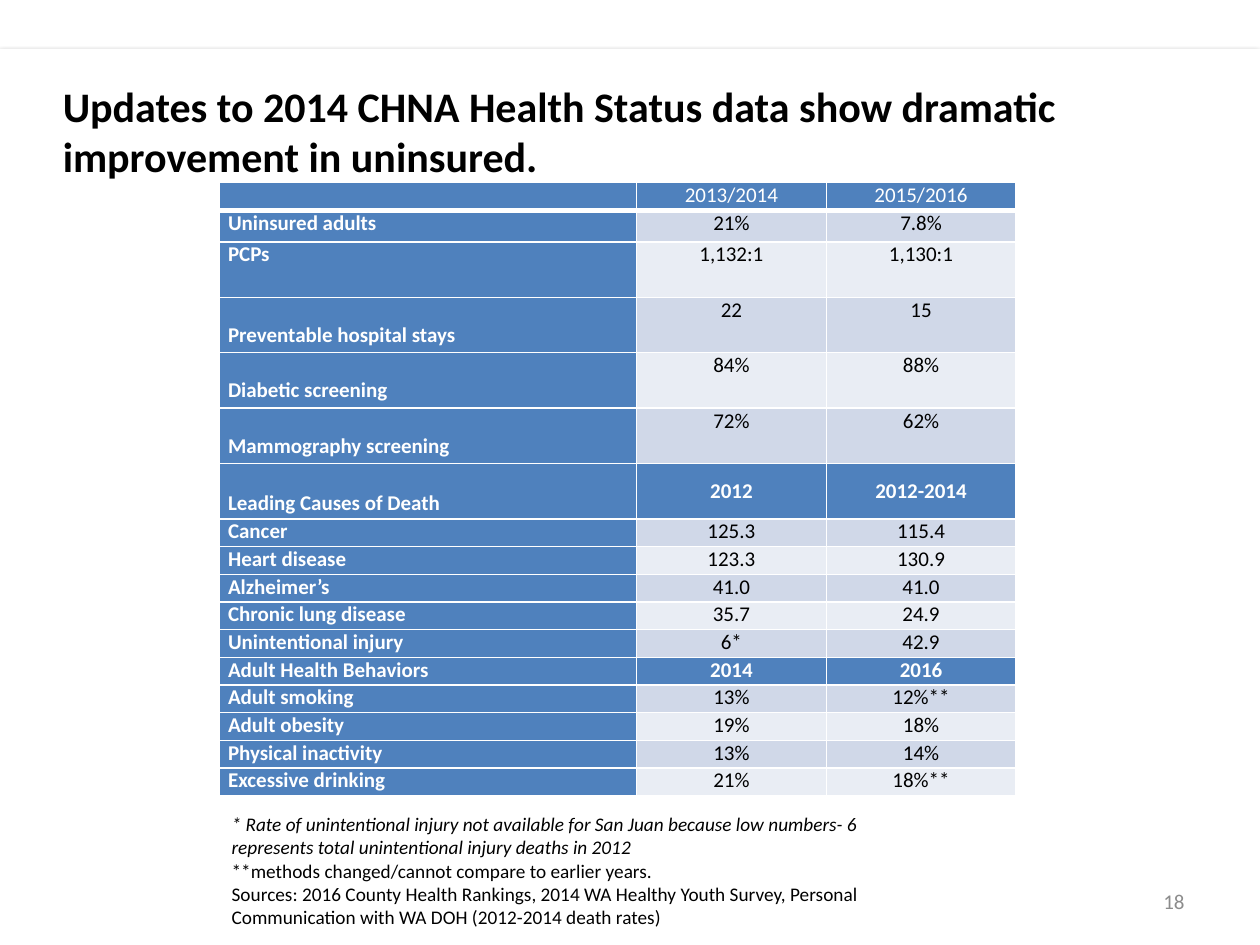
"""Build the slide of health status updates since the 2014 CHNA."""
import pptx
import pptx.util
import pptx.dml.color
import pptx.enum.shapes
import pptx.enum.text
import pptx.oxml
import pptx.oxml.ns

Inches = pptx.util.Inches
Pt = pptx.util.Pt
RGBColor = pptx.dml.color.RGBColor
Align = pptx.enum.text.PP_ALIGN
Anchor = pptx.enum.text.MSO_ANCHOR

BLACK = RGBColor(0, 0, 0)
WHITE = RGBColor(255, 255, 255)
GRAY = RGBColor(0x8C, 0x8C, 0x8C)
BLUE = RGBColor(0x4F, 0x81, 0xBD)
DARK = RGBColor(0xD0, 0xD8, 0xE8)
LIGHT = RGBColor(0xE9, 0xED, 0xF4)

FONT = "Calibri"
TITLE = "Updates to 2014 CHNA Health Status data show dramatic improvement in uninsured."
NOTES = [
    "* Rate of unintentional injury not available for San Juan because low numbers- 6 "
    "represents total unintentional injury deaths in 2012",
    "**methods changed/cannot compare to earlier years.",
    "Sources: 2016 County Health Rankings, 2014 WA Healthy Youth Survey, Personal "
    "Communication with WA DOH (2012-2014 death rates)",
]
COLS = [3.31, 1.51, 1.5]
ROWS = [
    ("", "2013/2014", "2015/2016"),
    ("Uninsured adults", "21%", "7.8%"),
    ("PCPs", "1,132:1", "1,130:1"),
    ("Preventable hospital stays", "22", "15"),
    ("Diabetic screening", "84%", "88%"),
    ("Mammography screening", "72%", "62%"),
    ("Leading Causes of Death", "2012", "2012-2014"),
    ("Cancer", "125.3", "115.4"),
    ("Heart disease", "123.3", "130.9"),
    ("Alzheimer’s", "41.0", "41.0"),
    ("Chronic lung disease", "35.7", "24.9"),
    ("Unintentional injury", "6*", "42.9"),
    ("Adult Health Behaviors", "2014", "2016"),
    ("Adult smoking", "13%", "12%**"),
    ("Adult obesity", "19%", "18%"),
    ("Physical inactivity", "13%", "14%"),
    ("Excessive drinking", "21%", "18%**"),
]
HEADS = (0, 6, 12)
TALL = range(2, 7)
LOW = range(3, 7)
MID = 6


def add_xml(parent, text):
    """Append an element, given as drawing XML, to its parent."""
    tag, rest = text.split(" ", 1)
    space = pptx.oxml.ns.nsdecls("a")
    parent.append(pptx.oxml.parse_xml(f"{tag} {space} {rest}"))


def style(para, size, color, bold=False, italic=False, align=Align.LEFT):
    """Set the font and alignment of a paragraph."""
    para.alignment = align
    font = para.font
    font.name, font.size = FONT, Pt(size)
    font.bold, font.italic = bold, italic
    font.color.rgb = color


def add_text(slide, box, lines, anchor=Anchor.TOP):
    """Add a wrapped text box and return its frame."""
    frame = slide.shapes.add_textbox(*map(Inches, box)).text_frame
    frame.word_wrap = True
    frame.vertical_anchor = anchor
    frame.text = "\n".join(lines)
    return frame


def add_panel(slide):
    """Add the white panel with a soft shadow."""
    rect = pptx.enum.shapes.MSO_SHAPE.RECTANGLE
    panel = slide.shapes.add_shape(rect, *map(Inches, (0, 0.39, 10, 7.11)))
    panel.fill.solid()
    panel.fill.fore_color.rgb = WHITE
    panel.line.fill.background()
    add_xml(panel._element.spPr,
            f'<a:effectLst ><a:outerShdw blurRad="{Pt(3.1)}" dist="{Pt(1.8)}" '
            'dir="5400000" rotWithShape="0"><a:srgbClr val="000000">'
            '<a:alpha val="35000"/></a:srgbClr></a:outerShdw></a:effectLst>')


def add_edges(cell, row):
    """Draw white cell borders, thick under the top row."""
    wide = {"T": 3 if row == 1 else 1, "B": 3 if row == 0 else 1}
    for side in "LRTB":
        add_xml(cell._tc.get_or_add_tcPr(),
                f'<a:ln{side} w="{Pt(wide.get(side, 1))}"><a:solidFill>'
                f'<a:srgbClr val="{WHITE}"/></a:solidFill></a:ln{side}>')


def fill_cell(cell, row, col, text):
    """Style one table cell by its row and column."""
    head = col == 0 or row in HEADS
    add_edges(cell, row)
    cell.fill.solid()
    cell.fill.fore_color.rgb = BLUE if head else DARK if row % 2 else LIGHT
    cell.margin_left = cell.margin_right = Inches(0.07)
    cell.margin_top = Inches(0.2 if col == 0 and row in LOW else 0)
    cell.margin_bottom = 0
    cell.vertical_anchor = Anchor.MIDDLE if row == MID else Anchor.TOP
    cell.text = text
    para = cell.text_frame.paragraphs[0]
    style(para, 12, WHITE if head else BLACK, bold=head and row > 0,
          align=Align.CENTER if col else Align.LEFT)
    if not text:
        add_xml(para._p, '<a:endParaRPr sz="1200"/>')


def add_grid(slide):
    """Add the table of health measures."""
    place = map(Inches, (1.74, 1.45, sum(COLS), 4.88))
    table = slide.shapes.add_table(len(ROWS), len(COLS), *place).table
    for col, width in enumerate(COLS):
        table.columns[col].width = Inches(width)
    for row, texts in enumerate(ROWS):
        high = 0.44 if row in TALL else 0.25 if row == 1 else 0.22
        table.rows[row].height = Inches(high)
        for col, text in enumerate(texts):
            fill_cell(table.cell(row, col), row, col, text)


def main():
    """Build and save the slide."""
    deck = pptx.Presentation()
    deck.slide_width, deck.slide_height = Inches(10), Inches(7.5)
    slide = deck.slides.add_slide(deck.slide_layouts[6])
    add_panel(slide)
    title = add_text(slide, (0.4, 0.41, 9, 1.25), [TITLE], Anchor.MIDDLE)
    style(title.paragraphs[0], 24, BLACK, bold=True)
    add_grid(slide)
    page = add_text(slide, (7.17, 6.95, 2.33, 0.4), ["18"], Anchor.MIDDLE)
    style(page.paragraphs[0], 12, GRAY, align=Align.RIGHT)
    notes = add_text(slide, (1.74, 6.4, 5.43, 1.03), NOTES)
    notes.auto_size = pptx.enum.text.MSO_AUTO_SIZE.SHAPE_TO_FIT_TEXT
    for num, para in enumerate(notes.paragraphs):
        style(para, 11, BLACK, italic=num == 0)
    deck.save("out.pptx")


if __name__ == "__main__":
    main()
